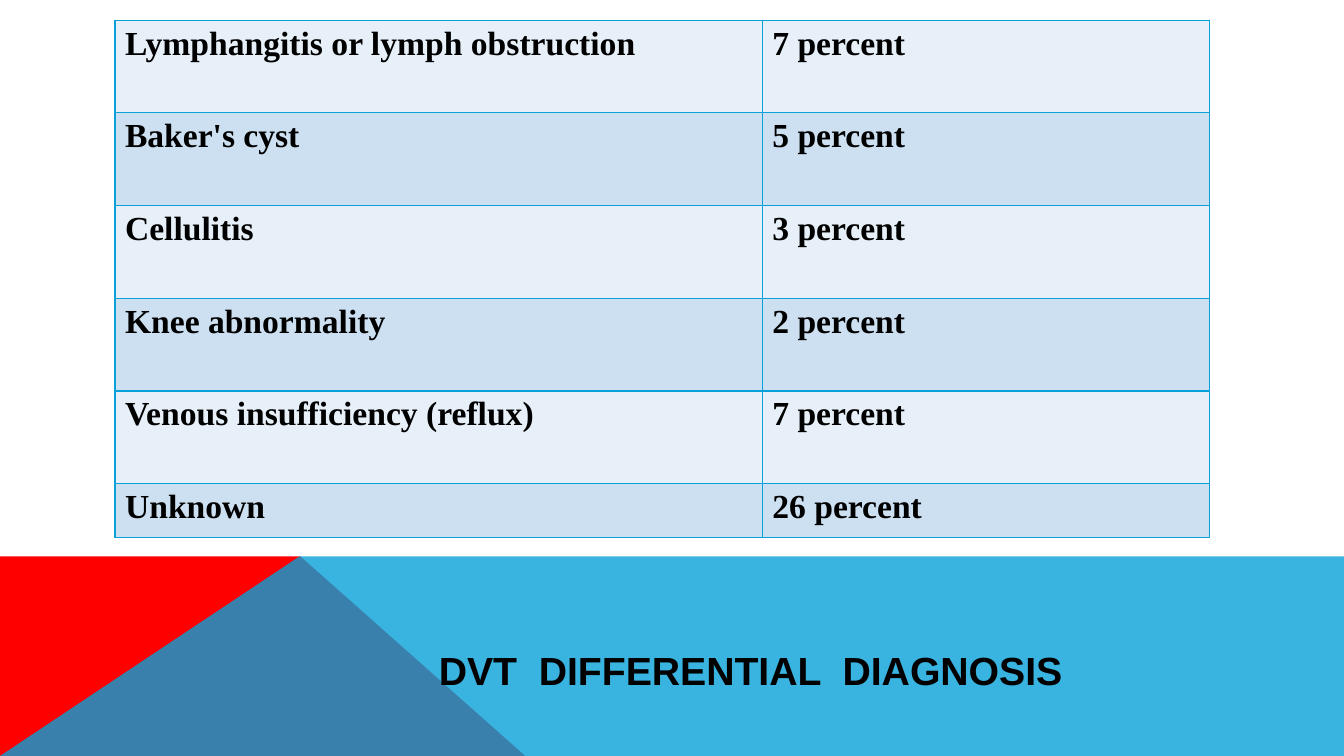
from lxml import etree
from pptx import Presentation
from pptx import util as u
from pptx.dml.color import RGBColor
from pptx.enum import text
from pptx.oxml.ns import qn

RED = RGBColor(0xFF, 0x00, 0x00)
BLUE = RGBColor(0x08, 0xA1, 0xD9)
BLACK = RGBColor(0x00, 0x00, 0x00)
BANDS = (RGBColor(0xE7, 0xF0, 0xF8), RGBColor(0xCC, 0xE0, 0xF1))

CAUSES = [
    ("Lymphangitis or lymph obstruction", "7 percent"),
    ("Baker's cyst", "5 percent"),
    ("Cellulitis", "3 percent"),
    ("Knee abnormality", "2 percent"),
    ("Venous insufficiency (reflux)", "7 percent"),
    ("Unknown", "26 percent"),
]


class Deck:
    title_font, title_size = "Arial", 28
    body_font, body_size = "Times New Roman", 24

    def __init__(self, width, height):
        self.prs = Presentation()
        self.prs.slide_width = u.Inches(width)
        self.prs.slide_height = u.Inches(height)
        self.s = self.prs.slides.add_slide(self.prs.slide_layouts[6])

    def style(self, p, font, size):
        for r in p.runs:
            r.font.name = font
            r.font.size = u.Pt(size)
            r.font.bold = True
            r.font.color.rgb = BLACK

    def polygon(self, points, color, opacity=100):
        points = [(u.Inches(x), u.Inches(y)) for x, y in points]
        builder = self.s.shapes.build_freeform(*points[0])
        builder.add_line_segments(points[1:], close=True)
        sp = builder.convert_to_shape()
        sp.shadow.inherit = False
        sp.fill.solid()
        sp.fill.fore_color.rgb = color
        sp.line.fill.background()
        if opacity < 100:
            clr = sp._element.spPr.find(".//" + qn("a:srgbClr"))
            etree.SubElement(clr, qn("a:alpha"), val=str(opacity * 1000))

    def title(self, words, left, top, width, height):
        sp = self.s.shapes.add_textbox(*map(u.Inches, (left, top, width, height)))
        tf = sp.text_frame
        tf.word_wrap = True
        tf.vertical_anchor = text.MSO_ANCHOR.MIDDLE
        tf.text = words
        p = tf.paragraphs[0]
        p.alignment = text.PP_ALIGN.CENTER
        self.style(p, self.title_font, self.title_size)

    def border(self, cell, color, width):
        tcPr = cell._tc.get_or_add_tcPr()
        for i, side in enumerate(("a:lnL", "a:lnR", "a:lnT", "a:lnB")):
            ln = etree.Element(qn(side), w=str(u.Pt(width)))
            fill = etree.SubElement(ln, qn("a:solidFill"))
            etree.SubElement(fill, qn("a:srgbClr"), val=str(color))
            tcPr.insert(i, ln)

    def table(self, rows, left, top, widths, heights):
        box = (left, top, sum(widths), sum(heights))
        frame = self.s.shapes.add_table(len(rows), len(widths), *map(u.Inches, box))
        table = frame.table
        for column, width in zip(table.columns, widths):
            column.width = u.Inches(width)
        for i, (row, height) in enumerate(zip(rows, heights)):
            table.rows[i].height = u.Inches(height)
            for j, words in enumerate(row):
                cell = table.cell(i, j)
                cell.text_frame.text = words
                self.style(cell.text_frame.paragraphs[0], self.body_font, self.body_size)
                cell.fill.solid()
                cell.fill.fore_color.rgb = BANDS[i % 2]
                self.border(cell, BLUE, 1)


def main():
    deck = Deck(13.33, 7.5)
    deck.polygon([(0, 7.5), (0, 5.52), (2.98, 5.52), (5.21, 7.5)], RED)
    deck.polygon([(0, 7.5), (2.97, 5.52), (13.33, 5.52), (13.33, 7.5)], BLUE, 80)
    deck.title("DVT  DIFFERENTIAL  DIAGNOSIS", 1.96, 6.35, 10.97, 0.6)
    deck.table(CAUSES, 1.14, 0.2, [6.42, 4.44], [0.92] * 5 + [0.53])
    deck.prs.save("out.pptx")


if __name__ == "__main__":
    main()
